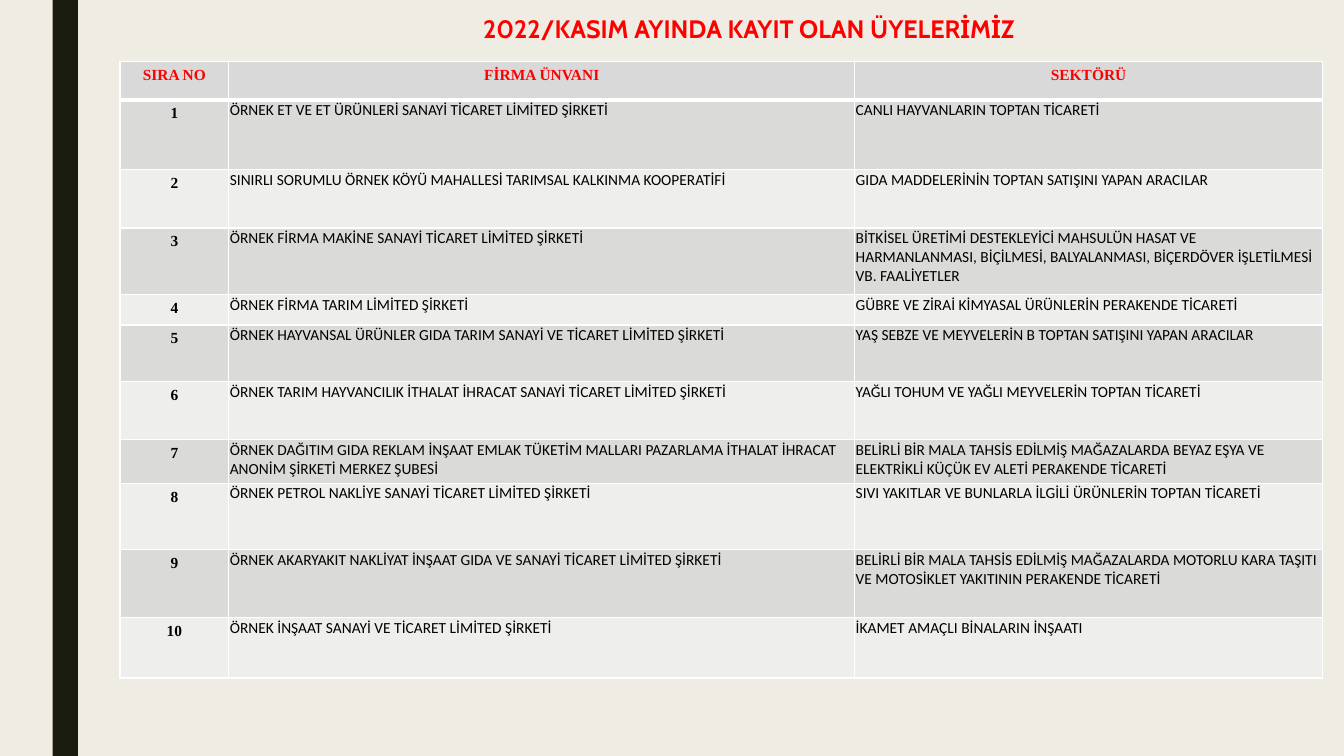
from lxml.etree import SubElement
from pptx import Presentation
from pptx.dml.color import RGBColor
from pptx.enum.shapes import MSO_SHAPE
from pptx.enum.text import MSO_ANCHOR, PP_ALIGN
from pptx.oxml.ns import qn
from pptx.util import Pt

COLORS = {
    "background": "EFEDE3",
    "bar": "191B0E",
    "accent": "FF0000",
    "text": "000000",
    "border": "FFFFFF",
    "header": "D9D9D9",
    "odd": "DADBD9",
    "even": "EEEEED",
}
COLUMN_WIDTHS = [77.8, 447.1, 334.1]
ROW_HEIGHTS = [27.4, 49.7, 41.8, 47.5, 21.8, 40.3, 41.8, 31, 47.5, 48.5, 43.2]
HEADINGS = ["SIRA NO", "FİRMA ÜNVANI", "SEKTÖRÜ"]
MEMBERS = [
    ("ÖRNEK ET VE ET ÜRÜNLERİ SANAYİ TİCARET LİMİTED ŞİRKETİ",
     "CANLI HAYVANLARIN TOPTAN TİCARETİ"),
    ("SINIRLI SORUMLU ÖRNEK KÖYÜ MAHALLESİ TARIMSAL KALKINMA KOOPERATİFİ",
     "GIDA MADDELERİNİN TOPTAN SATIŞINI YAPAN ARACILAR"),
    ("ÖRNEK FİRMA MAKİNE SANAYİ TİCARET LİMİTED ŞİRKETİ",
     "BİTKİSEL ÜRETİMİ DESTEKLEYİCİ MAHSULÜN HASAT VE HARMANLANMASI, BİÇİLMESİ, "
     "BALYALANMASI, BİÇERDÖVER İŞLETİLMESİ VB. FAALİYETLER"),
    ("ÖRNEK FİRMA TARIM LİMİTED ŞİRKETİ",
     "GÜBRE VE ZİRAİ KİMYASAL ÜRÜNLERİN PERAKENDE TİCARETİ"),
    ("ÖRNEK HAYVANSAL ÜRÜNLER GIDA TARIM SANAYİ VE TİCARET LİMİTED ŞİRKETİ",
     "YAŞ SEBZE VE MEYVELERİN B TOPTAN SATIŞINI YAPAN ARACILAR"),
    ("ÖRNEK TARIM HAYVANCILIK İTHALAT İHRACAT SANAYİ TİCARET LİMİTED ŞİRKETİ",
     "YAĞLI TOHUM VE YAĞLI MEYVELERİN TOPTAN TİCARETİ"),
    ("ÖRNEK DAĞITIM GIDA REKLAM İNŞAAT EMLAK TÜKETİM MALLARI PAZARLAMA İTHALAT İHRACAT "
     "ANONİM ŞİRKETİ MERKEZ ŞUBESİ",
     "BELİRLİ BİR MALA TAHSİS EDİLMİŞ MAĞAZALARDA BEYAZ EŞYA VE ELEKTRİKLİ KÜÇÜK EV ALETİ "
     "PERAKENDE TİCARETİ"),
    ("ÖRNEK PETROL NAKLİYE SANAYİ TİCARET LİMİTED ŞİRKETİ",
     "SIVI YAKITLAR VE BUNLARLA İLGİLİ ÜRÜNLERİN TOPTAN TİCARETİ"),
    ("ÖRNEK AKARYAKIT NAKLİYAT İNŞAAT GIDA VE SANAYİ TİCARET LİMİTED ŞİRKETİ",
     "BELİRLİ BİR MALA TAHSİS EDİLMİŞ MAĞAZALARDA MOTORLU KARA TAŞITI VE MOTOSİKLET "
     "YAKITININ PERAKENDE TİCARETİ"),
    ("ÖRNEK İNŞAAT SANAYİ VE TİCARET LİMİTED ŞİRKETİ",
     "İKAMET AMAÇLI BİNALARIN İNŞAATI"),
]


def set_fill(fill, color):
    fill.solid()
    fill.fore_color.rgb = RGBColor.from_string(COLORS[color])


def add_text(tf, text, size, font, color, bold, align):
    tf.word_wrap = True
    p = tf.paragraphs[0]
    p.alignment = align
    r = p.add_run()
    r.text = text
    r.font.size = Pt(size)
    r.font.name = font
    r.font.bold = bold
    r.font.color.rgb = RGBColor.from_string(COLORS[color])
    return p


def add_bar(s):
    sp = s.shapes.add_shape(MSO_SHAPE.RECTANGLE, Pt(37.6), 0, Pt(18), Pt(540))
    sp.shadow.inherit = False
    set_fill(sp.fill, "bar")
    sp.line.fill.background()


def add_title(s, text):
    sp = s.shapes.add_textbox(Pt(310.3), Pt(11.5), Pt(449.3), Pt(21))
    tf = sp.text_frame
    tf.margin_top = tf.margin_bottom = 0
    tf.vertical_anchor = MSO_ANCHOR.MIDDLE
    p = add_text(tf, text, 18, "Cabin", "accent", True, PP_ALIGN.CENTER)
    p.line_spacing = 0.89


def set_borders(cell, top, bottom):
    tc_pr = cell._tc.get_or_add_tcPr()
    sides = [("a:lnL", 1), ("a:lnR", 1), ("a:lnT", top), ("a:lnB", bottom)]
    for i, (tag, width) in enumerate(sides):
        ln = SubElement(tc_pr, qn(tag), w=str(Pt(width)))
        fill = SubElement(ln, qn("a:solidFill"))
        SubElement(fill, qn("a:srgbClr"), val=COLORS["border"])
        tc_pr.insert(i, ln)


def fill_cell(cell, row, col, text):
    header = row == 0
    if header or col == 0:
        color = "accent" if header else "text"
        add_text(cell.text_frame, text, 11, "Times New Roman", color, True, PP_ALIGN.CENTER)
    else:
        cell.margin_left = cell.margin_right = cell.margin_top = Pt(0.7)
        cell.margin_bottom = 0
        add_text(cell.text_frame, text, 11, "Calibri", "text", False, PP_ALIGN.LEFT)
    set_fill(cell.fill, "header" if header else "odd" if row % 2 else "even")
    set_borders(cell, 3 if row == 1 else 1, 3 if header else 1)


def add_member_table(s):
    rows = [HEADINGS] + [(str(i), *m) for i, m in enumerate(MEMBERS, 1)]
    frame = s.shapes.add_table(len(rows), len(HEADINGS), Pt(85.7), Pt(44),
                               Pt(sum(COLUMN_WIDTHS)), Pt(sum(ROW_HEIGHTS)))
    table = frame.table
    table.first_row = table.horz_banding = False
    for column, width in zip(table.columns, COLUMN_WIDTHS):
        column.width = Pt(width)
    for row, height in zip(table.rows, ROW_HEIGHTS):
        row.height = Pt(height)
    for i, texts in enumerate(rows):
        for j, text in enumerate(texts):
            fill_cell(table.cell(i, j), i, j, text)


def main():
    prs = Presentation()
    prs.slide_width, prs.slide_height = Pt(960), Pt(540)
    s = prs.slides.add_slide(prs.slide_layouts[6])
    set_fill(s.background.fill, "background")
    add_bar(s)
    add_title(s, "2022/KASIM AYINDA KAYIT OLAN ÜYELERİMİZ")
    add_member_table(s)
    prs.save("out.pptx")


if __name__ == "__main__":
    main()
